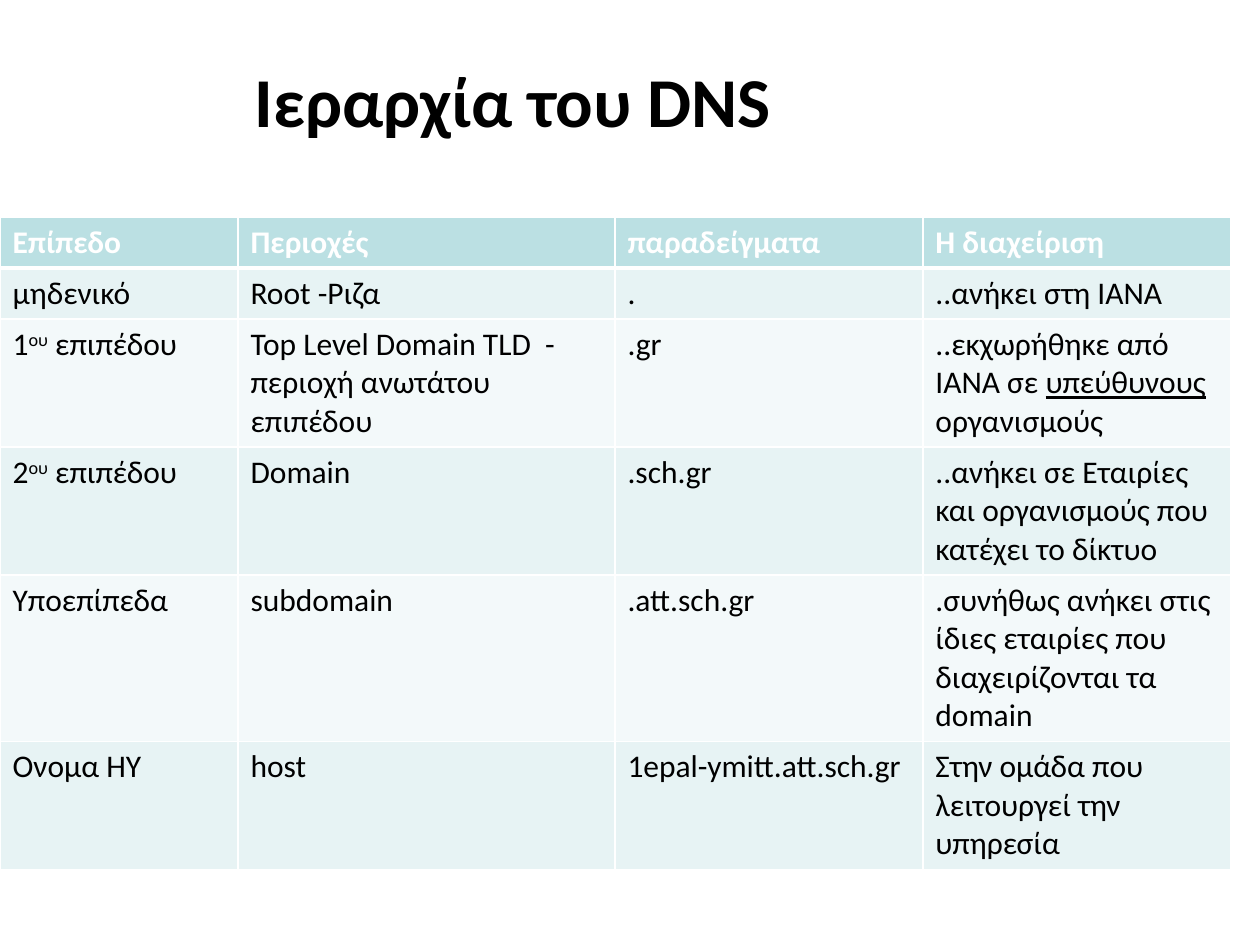
from lxml.etree import SubElement
from pptx import Presentation
from pptx.dml.color import RGBColor
from pptx.enum.text import MSO_ANCHOR, MSO_AUTO_SIZE, PP_ALIGN
from pptx.oxml.ns import qn
from pptx.util import Emu, Inches, Pt

PIXELS_PER_INCH = 126
FONT = "Calibri"
WHITE, BLACK = "FFFFFF", "000000"
HEADER_FILL = "BBE0E3"
BAND_FILLS = ["F3F9FA", "E7F3F4"]
COLUMN_WIDTHS = [238, 377, 308, 308]
ROW_HEIGHT = 51
TABLE_HEIGHT = 644
HEADER_RULE = 3

RAISED = {"baseline": "30000"}
UNDERLINED = {"u": "sng"}

# A cell is a list of (text, run attributes) pairs, or one plain string.
ROWS = [
    ["Επίπεδο", "Περιοχές", "παραδείγματα", "Η διαχείριση"],
    ["μηδενικό", "Root -Ριζα", ".", "..ανήκει στη ΙΑΝΑ"],
    [
        [("1", {}), ("ου", RAISED), (" επιπέδου", {})],
        "Top Level Domain TLD  - περιοχή ανωτάτου επιπέδου",
        ".gr",
        [("..εκχωρήθηκε από ΙΑΝΑ σε ", {}), ("υπεύθυνους", UNDERLINED), (" οργανισμούς", {})],
    ],
    [
        [("2", {}), ("ου", RAISED), (" επιπέδου", {})],
        "Domain",
        ".sch.gr",
        "..ανήκει σε Εταιρίες και οργανισμούς που κατέχει το δίκτυο",
    ],
    [
        "Υποεπίπεδα",
        "subdomain",
        ".att.sch.gr",
        ".συνήθως ανήκει στις ίδιες εταιρίες που διαχειρίζονται τα domain",
    ],
    ["Ονομα ΗΥ", "host", "1epal-ymitt.att.sch.gr", "Στην ομάδα που λειτουργεί την υπηρεσία"],
]


def px(length):
    return Emu(round(length * 914400 / PIXELS_PER_INCH))


def color(value):
    return RGBColor.from_string(value)


def add_span(para, text, size, ink, bold, attributes):
    span = para.add_run()
    span.text = text
    for name, value in {"name": FONT, "size": Pt(size), "bold": bold}.items():
        setattr(span.font, name, value)
    span.font.color.rgb = color(ink)
    for name, value in attributes.items():
        span._r.get_or_add_rPr().set(name, value)


def set_borders(cell, widths):
    """Draw white cell borders; widths maps each side (L, R, T, B) to points."""
    properties = cell._tc.get_or_add_tcPr()
    for side, width in widths.items():
        line = SubElement(properties, qn(f"a:ln{side}"), w=str(Pt(width)))
        fill = SubElement(line, qn("a:solidFill"))
        SubElement(fill, qn("a:srgbClr"), val=WHITE)


def fill_cell(cell, content, row_index):
    is_header = row_index == 0
    set_borders(cell, {
        "L": 1,
        "R": 1,
        "T": HEADER_RULE if row_index == 1 else 1,
        "B": HEADER_RULE if is_header else 1,
    })
    cell.fill.solid()
    cell.fill.fore_color.rgb = color(HEADER_FILL if is_header else BAND_FILLS[row_index % 2])
    spans = [(content, {})] if isinstance(content, str) else content
    for text, attributes in spans:
        add_span(cell.text_frame.paragraphs[0], text, 18,
                 WHITE if is_header else BLACK, is_header, attributes)


def add_title(slide, text):
    title = slide.shapes.title
    place = {"left": 242, "top": 42, "width": 966, "height": 116}
    for name, value in place.items():
        setattr(title, name, px(value))
    frame = title.text_frame
    layout = {"word_wrap": True, "auto_size": MSO_AUTO_SIZE.NONE,
              "vertical_anchor": MSO_ANCHOR.MIDDLE}
    for name, value in layout.items():
        setattr(frame, name, value)
    para = frame.paragraphs[0]
    para.alignment = PP_ALIGN.LEFT
    add_span(para, text, 40, BLACK, True, {})


def add_hierarchy_table(slide):
    box = slide.shapes.add_table(len(ROWS), len(COLUMN_WIDTHS), px(0), px(217),
                                 px(sum(COLUMN_WIDTHS)), px(TABLE_HEIGHT))
    table = box.table
    for column, width in zip(table.columns, COLUMN_WIDTHS):
        column.width = px(width)
    for row_index, (row, contents) in enumerate(zip(table.rows, ROWS)):
        row.height = px(ROW_HEIGHT)
        for cell, content in zip(row.cells, contents):
            fill_cell(cell, content, row_index)
    # Rows grow to fit their text, so the frame is taller than their minimum.
    box.height = px(TABLE_HEIGHT)


def main():
    deck = Presentation()
    deck.slide_width, deck.slide_height = Inches(10), Inches(7.5)
    slide = deck.slides.add_slide(deck.slide_layouts[5])
    add_title(slide, "Ιεραρχία του DNS")
    add_hierarchy_table(slide)
    deck.save("out.pptx")


if __name__ == "__main__":
    main()
